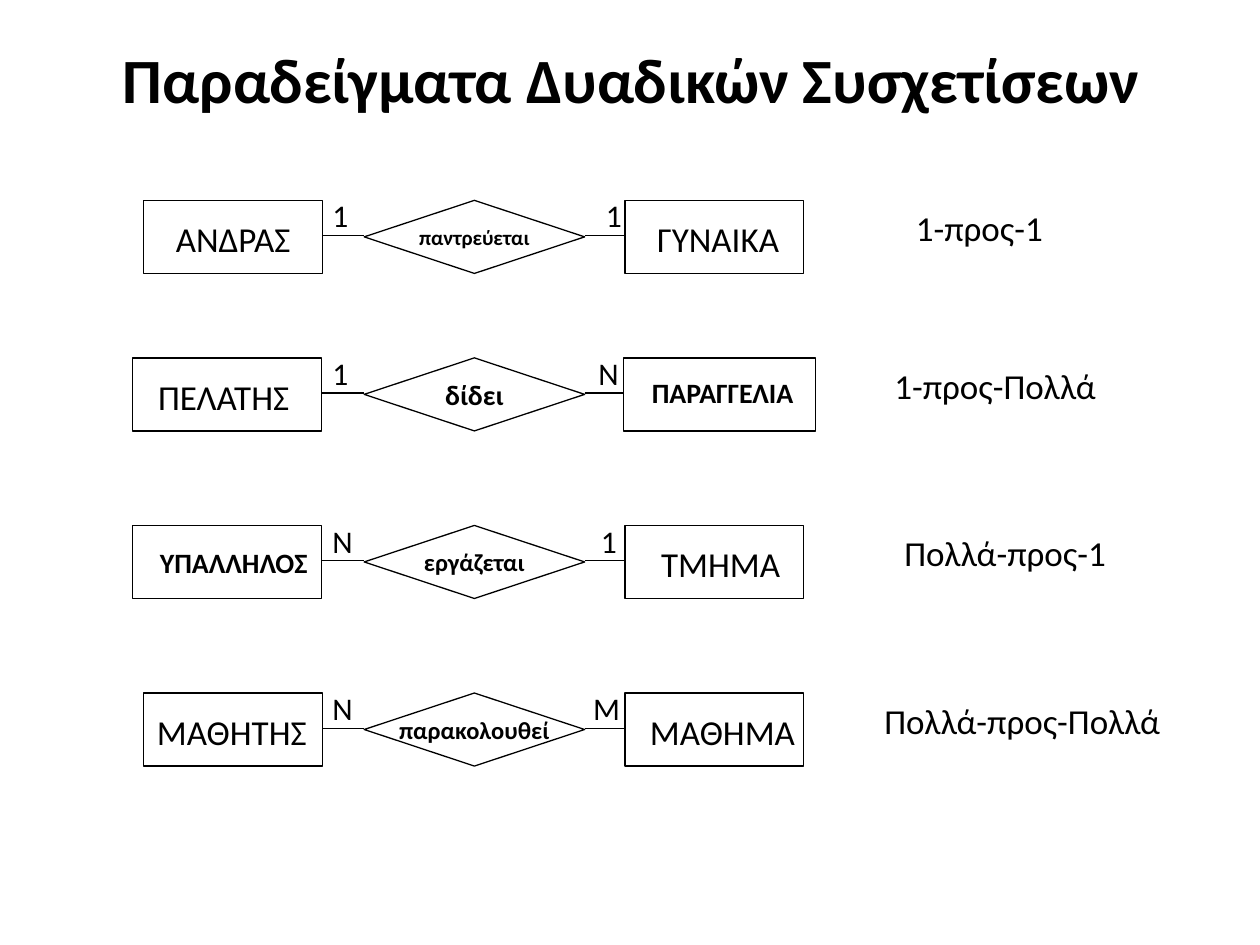
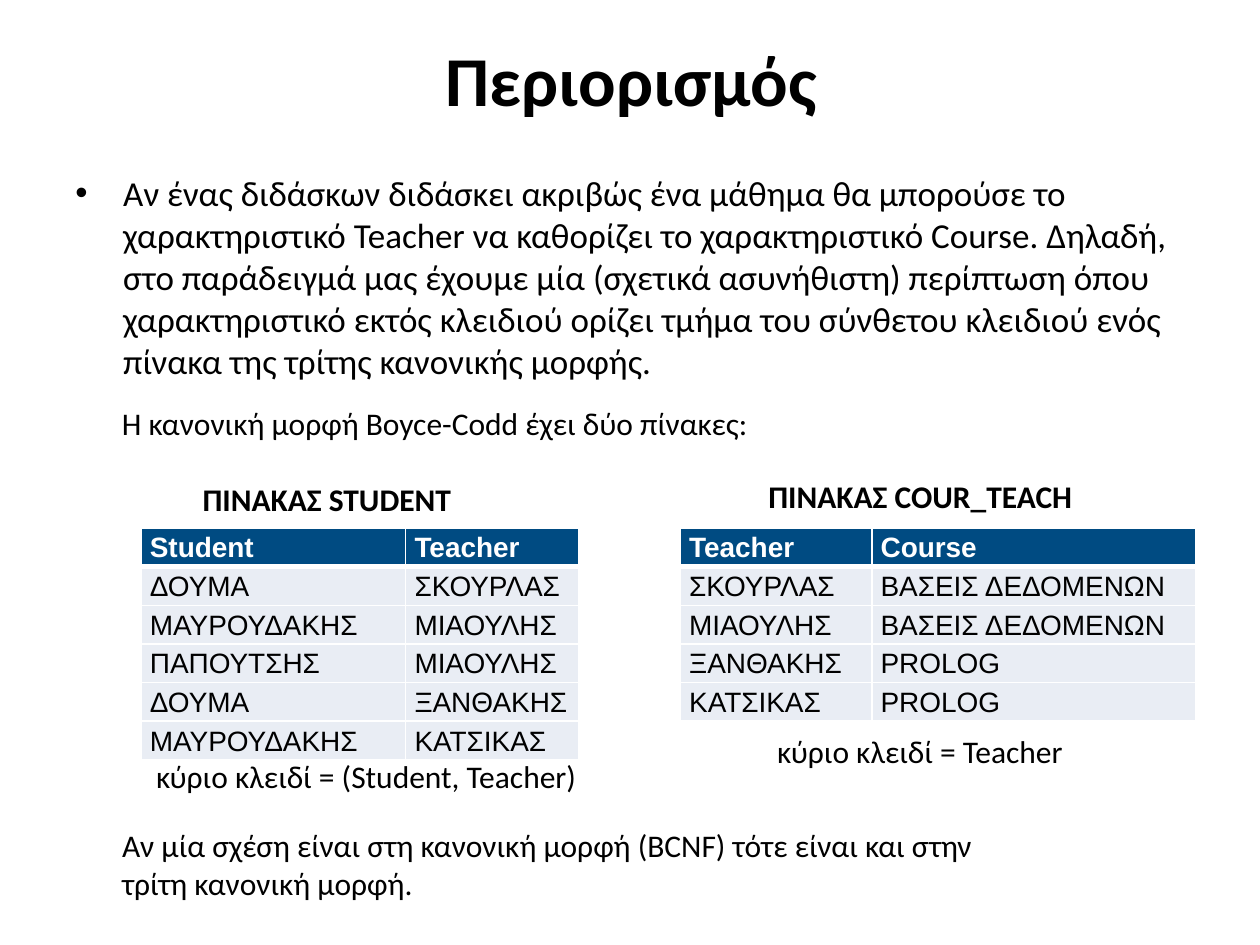
from dataclasses import dataclass

from lxml import etree
from pptx import Presentation
from pptx.dml.color import RGBColor
from pptx.enum.shapes import MSO_CONNECTOR, MSO_SHAPE
from pptx.enum.text import MSO_ANCHOR, PP_ALIGN
from pptx.oxml.ns import qn
from pptx.util import Inches, Pt

LEFT, CENTER = PP_ALIGN.LEFT, PP_ALIGN.CENTER
TOP, MIDDLE = MSO_ANCHOR.TOP, MSO_ANCHOR.MIDDLE
RECTANGLE, DIAMOND = MSO_SHAPE.RECTANGLE, MSO_SHAPE.DIAMOND
STRAIGHT = MSO_CONNECTOR.STRAIGHT
TITLE_ONLY = 5


@dataclass(frozen=True)
class Theme:
    font: str = "Calibri"
    table_font: str = "Arial"
    ink: str = "000000"
    paper: str = "FFFFFF"
    header: str = "004B82"
    body_row: str = "E9EDF4"
    large: int = 20
    normal: int = 18
    small: int = 16
    tiny: int = 14
    outline: float = 0.75


THEME = Theme()


def write(frame, text, size=THEME.normal, bold=False, color=THEME.ink,
          font=THEME.font, align=LEFT, anchor=TOP, wrap=True, spacing=None):
    frame.word_wrap = wrap
    frame.vertical_anchor = anchor
    paragraph = frame.paragraphs[0]
    paragraph.alignment = align
    if spacing:
        paragraph.line_spacing = spacing
    run = paragraph.add_run()
    run.text = text
    run.font.size = Pt(size)
    run.font.bold = bold
    run.font.name = font
    run.font.color.rgb = RGBColor.from_string(color)
    return paragraph


def add_bullet(paragraph, indent):
    properties = paragraph._p.get_or_add_pPr()
    properties.set("marL", str(indent))
    properties.set("indent", str(-indent))
    etree.SubElement(properties, qn("a:buFont"), typeface="Arial")
    etree.SubElement(properties, qn("a:buChar"), char="•")


def add_borders(cell, color, bottom):
    properties = cell._tc.get_or_add_tcPr()
    for side, width in (("L", 1), ("R", 1), ("T", 1), ("B", bottom)):
        line = etree.SubElement(properties, qn(f"a:ln{side}"), w=str(Pt(width)))
        fill = etree.SubElement(line, qn("a:solidFill"))
        etree.SubElement(fill, qn("a:srgbClr"), val=color)


class Deck:
    def __init__(self, theme):
        self.theme = theme
        self.presentation = Presentation()
        self.presentation.slide_width = Inches(10)
        self.presentation.slide_height = Inches(7.5)
        self.slide = None
        self.shapes = None

    def start_slide(self, title, size):
        layout = self.presentation.slide_layouts[TITLE_ONLY]
        self.slide = self.presentation.slides.add_slide(layout)
        self.shapes = self.slide.shapes
        shape = self.shapes.title
        shape.left, shape.top = Inches(0.51), Inches(0.13)
        shape.width, shape.height = Inches(9), Inches(0.99)
        write(shape.text_frame, title, size=size, bold=True, align=CENTER, anchor=MIDDLE)

    def start_group(self):
        """Send the elements that follow to a new group on the slide."""
        self.shapes = self.slide.shapes.add_group_shape().shapes

    def text(self, text, left, top, width, height=0.4, **style):
        box = self.shapes.add_textbox(*map(Inches, (left, top, width, height)))
        return write(box.text_frame, text, **style)

    def outline(self, kind, left, top, width, height):
        shape = self.shapes.add_shape(kind, *map(Inches, (left, top, width, height)))
        shape.shadow.inherit = False
        shape.fill.background()
        self.ink_line(shape)
        return shape

    def line(self, start, end, y):
        connector = self.shapes.add_connector(STRAIGHT, *map(Inches, (start, y, end, y)))
        etree.SubElement(connector._element.spPr, qn("a:effectLst"))
        self.ink_line(connector)

    def ink_line(self, shape):
        shape.line.color.rgb = RGBColor.from_string(self.theme.ink)
        shape.line.width = Pt(self.theme.outline)

    def table(self, rows, left, top, widths, row_height):
        frame = self.shapes.add_table(len(rows), len(widths), Inches(left), Inches(top),
                                      Inches(sum(widths)), Inches(row_height * len(rows)))
        table = frame.table
        table.horz_banding = False
        for column, width in zip(table.columns, widths):
            column.width = Inches(width)
        for row_index, row in enumerate(rows):
            for column_index, value in enumerate(row):
                self.cell(table.cell(row_index, column_index), value, row_index == 0)

    def cell(self, cell, value, is_header):
        theme = self.theme
        cell.margin_left = cell.margin_right = Inches(0.07)
        cell.margin_top = cell.margin_bottom = 0
        add_borders(cell, theme.paper, bottom=3 if is_header else 1)
        cell.fill.solid()
        cell.fill.fore_color.rgb = RGBColor.from_string(
            theme.header if is_header else theme.body_row)
        write(cell.text_frame, value, size=theme.small, bold=is_header, spacing=1.15,
              font=theme.table_font, color=theme.paper if is_header else theme.ink)


@dataclass(frozen=True)
class Entity:
    """A box with its own label; label_drop is measured from the top of the box."""
    name: str
    left: float
    width: float
    label_left: float
    label_width: float
    label_drop: float = 0.09
    emphasised: bool = False


@dataclass(frozen=True)
class Relationship:
    top: float
    source: Entity
    target: Entity
    verb: str
    verb_size: int
    source_count: str
    target_count: str
    target_count_left: float
    ratio: str
    ratio_left: float
    ratio_width: float


RELATIONSHIPS = [
    Relationship(1.59, Entity("ΑΝΔΡΑΣ", 1.14, 1.42, 1.29, 1.12),
                 Entity("ΓΥΝΑΙΚΑ", 4.96, 1.42, 5.11, 1.18),
                 "παντρεύεται", 12, "1", "1", 4.71, "1-προς-1", 7.17, 1.42),
    Relationship(2.84, Entity("ΠΕΛΑΤΗΣ", 1.05, 1.5, 1, 1.55),
                 Entity("ΠΑΡΑΓΓΕΛΙΑ", 4.95, 1.52, 4.89, 1.69, emphasised=True),
                 "δίδει", THEME.small, "1", "Ν", 4.65, "1-προς-Πολλά", 7, 2),
    Relationship(4.17, Entity("ΥΠΑΛΛΗΛΟΣ", 1.05, 1.5, 1.16, 1.39, 0.11, True),
                 Entity("ΤΜΗΜΑ", 4.96, 1.42, 5.05, 1.34),
                 "εργάζεται", THEME.tiny, "Ν", "1", 4.67, "Πολλά-προς-1", 7.08, 2),
    Relationship(5.5, Entity("ΜΑΘΗΤΗΣ", 1.14, 1.42, 1.14, 1.4),
                 Entity("ΜΑΘΗΜΑ", 4.96, 1.42, 5.05, 1.37),
                 "παρακολουθεί", THEME.tiny, "Ν", "Μ", 4.61, "Πολλά-προς-Πολλά", 6.92, 2.58),
]
BOX_HEIGHT = 0.58
DIAMOND_LEFT, DIAMOND_WIDTH = 2.89, 1.75
COUNT_WIDTHS = {"1": 0.34, "Ν": 0.37, "Μ": 0.42}


def draw_entity(deck, entity, top):
    theme = deck.theme
    deck.outline(RECTANGLE, entity.left, top, entity.width, BOX_HEIGHT)
    deck.text(entity.name, entity.label_left, top + entity.label_drop, entity.label_width,
              0.37 if entity.emphasised else 0.44, align=CENTER, wrap=False,
              size=theme.small if entity.emphasised else theme.large,
              bold=entity.emphasised)


def draw_relationship(deck, relationship):
    top, source, target = relationship.top, relationship.source, relationship.target
    deck.start_group()
    for entity in (source, target):
        draw_entity(deck, entity, top)
    diamond = deck.outline(DIAMOND, DIAMOND_LEFT, top, DIAMOND_WIDTH, BOX_HEIGHT)
    write(diamond.text_frame, relationship.verb, size=relationship.verb_size, bold=True,
          align=CENTER, anchor=MIDDLE, wrap=False)
    deck.line(source.left + source.width, DIAMOND_LEFT, top + 0.28)
    deck.line(DIAMOND_LEFT + DIAMOND_WIDTH, target.left, top + 0.28)
    for count, left in ((relationship.source_count, 2.54),
                        (relationship.target_count, relationship.target_count_left)):
        deck.text(count, left, top - 0.08, COUNT_WIDTHS[count], wrap=False)
    deck.text(relationship.ratio, relationship.ratio_left, top, relationship.ratio_width,
              0.5, size=deck.theme.large)


def build_relationships(deck):
    deck.start_slide("Παραδείγματα Δυαδικών Συσχετίσεων", size=36)
    for relationship in RELATIONSHIPS:
        draw_relationship(deck, relationship)


STUDENT_ROWS = [
    ("Student", "Teacher"),
    ("ΔΟΥΜΑ", "ΣΚΟΥΡΛΑΣ"),
    ("ΜΑΥΡΟΥΔΑΚΗΣ", "ΜΙΑΟΥΛΗΣ"),
    ("ΠΑΠΟΥΤΣΗΣ", "ΜΙΑΟΥΛΗΣ"),
    ("ΔΟΥΜΑ", "ΞΑΝΘΑΚΗΣ"),
    ("ΜΑΥΡΟΥΔΑΚΗΣ", "ΚΑΤΣΙΚΑΣ"),
]
COURSE_ROWS = [
    ("Teacher", "Course"),
    ("ΣΚΟΥΡΛΑΣ", "ΒΑΣΕΙΣ ΔΕΔΟΜΕΝΩΝ"),
    ("ΜΙΑΟΥΛΗΣ", "ΒΑΣΕΙΣ ΔΕΔΟΜΕΝΩΝ"),
    ("ΞΑΝΘΑΚΗΣ", "PROLOG"),
    ("ΚΑΤΣΙΚΑΣ", "PROLOG"),
]


def build_constraint(deck):
    deck.start_slide("Περιορισμός", size=40)
    explanation = deck.text(
        "Αν ένας διδάσκων διδάσκει ακριβώς ένα μάθημα θα μπορούσε το χαρακτηριστικό "
        "Teacher να καθορίζει το χαρακτηριστικό Course. Δηλαδή, στο παράδειγμά μας "
        "έχουμε μία (σχετικά ασυνήθιστη) περίπτωση όπου χαρακτηριστικό εκτός κλειδιού "
        "ορίζει τμήμα του σύνθετου κλειδιού ενός πίνακα της τρίτης κανονικής μορφής.",
        0.5, 1.31, 9, 1.85, size=deck.theme.large)
    add_bullet(explanation, Inches(0.38))
    deck.text("Η κανονική μορφή Boyce-Codd έχει δύο πίνακες:", 0.87, 3.16, 6.14)

    deck.text("ΠΙΝΑΚΑΣ STUDENT", 1.51, 3.76, 2.2, bold=True, wrap=False)
    deck.table(STUDENT_ROWS, 1.12, 4.19, (2.1, 1.37), row_height=0.306)
    deck.text("κύριο κλειδί = (Student, Teacher)", 1.14, 5.96, 3.58, wrap=False)

    deck.text("ΠΙΝΑΚΑΣ COUR_TEACH", 6, 3.74, 2.63, bold=True, wrap=False)
    deck.table(COURSE_ROWS, 5.4, 4.19, (1.52, 2.57), row_height=0.306)
    deck.text("κύριο κλειδί = Teacher", 6.07, 5.76, 2.5, wrap=False)

    deck.text("Αν μία σχέση είναι στη κανονική μορφή (BCNF) τότε είναι και στην "
              "τρίτη κανονική μορφή.", 0.87, 6.51, 7.35, 0.71)


def main():
    deck = Deck(THEME)
    build_relationships(deck)
    build_constraint(deck)
    deck.presentation.save("out.pptx")


if __name__ == "__main__":
    main()
